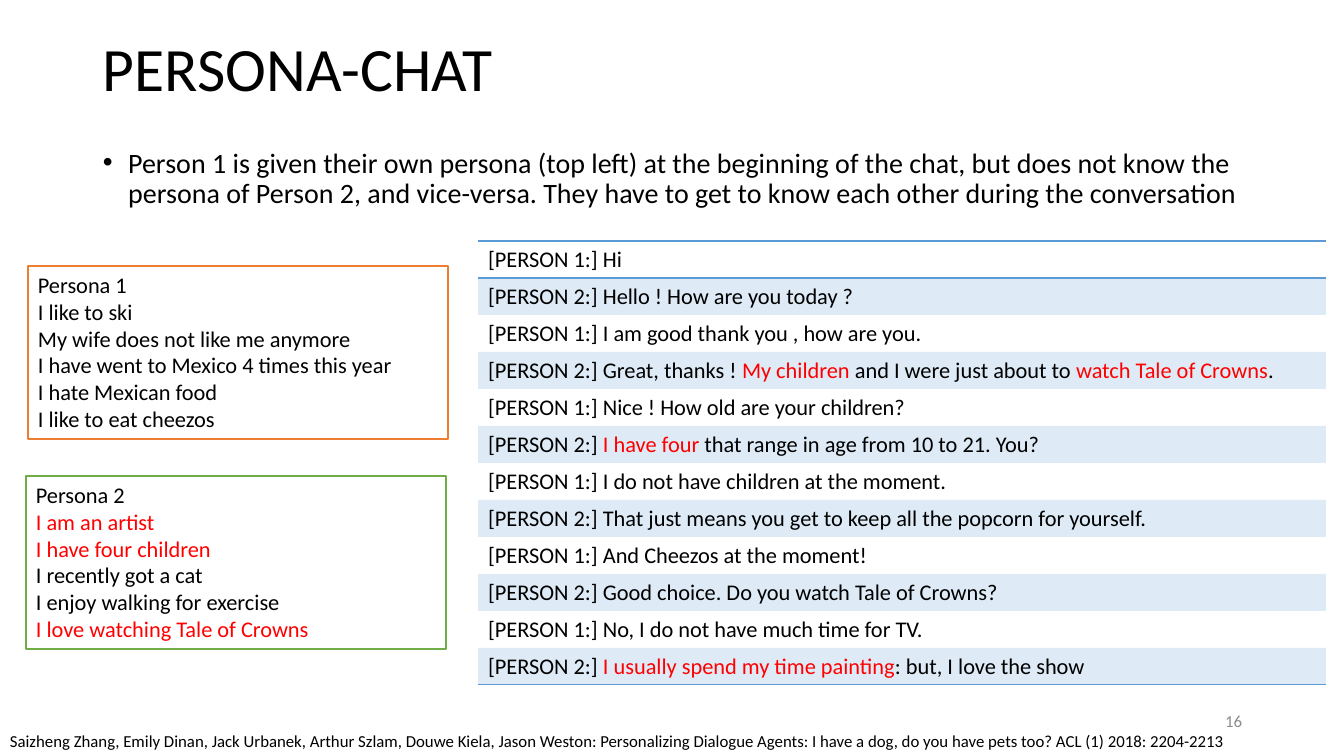
from dataclasses import dataclass

from lxml import etree
from pptx import Presentation
from pptx.dml.color import RGBColor
from pptx.enum.shapes import MSO_SHAPE
from pptx.enum.text import MSO_ANCHOR as ANCHOR, PP_ALIGN as ALIGN
from pptx.oxml.ns import qn
from pptx.util import Pt

PX = 9071.43  # EMU per px


@dataclass
class Theme:
    font: str = "Calibri"
    text: str = "000000"
    paper: str = "FFFFFF"
    mark: str = "FF0000"
    muted: str = "8C8C8C"
    orange: str = "ED7D31"
    green: str = "70AD47"
    blue: str = "5B9BD5"
    title: int = 44
    body: int = 20
    talk: int = 16
    small: int = 12


T = Theme()


def px(*lengths):
    return [round(n * PX) for n in lengths]


def write(tf, lines, size, color=T.text, align=ALIGN.LEFT, anchor=ANCHOR.TOP,
          spacing=None, bullet=False):
    """Fill a text frame; words between asterisks take the mark colour."""
    tf.word_wrap = True
    tf.vertical_anchor = anchor
    for i, line in enumerate(lines):
        p = tf.add_paragraph() if i else tf.paragraphs[0]
        p.alignment = align
        if spacing:
            p.line_spacing = spacing
        if bullet:
            pPr = p._p.get_or_add_pPr()
            pPr.set("marL", "228600")
            pPr.set("indent", "-228600")
            etree.SubElement(pPr, qn("a:buFont"), typeface="Arial")
            etree.SubElement(pPr, qn("a:buChar"), char="•")
        for j, part in enumerate(line.split("*")):
            if part:
                r = p.add_run()
                r.text = part
                r.font.name = T.font
                r.font.size = Pt(size)
                r.font.color.rgb = RGBColor.from_string(T.mark if j % 2 else color)


prs = Presentation()
prs.slide_width, prs.slide_height = px(1344, 756)
s = prs.slides.add_slide(prs.slide_layouts[6])

# Title, bullet and page number
texts = [
    ((93, 0, 1159, 144), "PERSONA-CHAT",
     dict(size=T.title, anchor=ANCHOR.MIDDLE, spacing=0.9)),
    ((93, 144, 1159, 444),
     "Person 1 is given their own persona (top left) at the beginning of the chat, "
     "but does not know the persona of Person 2, and vice-versa. "
     "They have to get to know each other during the conversation",
     dict(size=T.body, spacing=0.9, bullet=True)),
    ((950, 701, 302, 40), "16",
     dict(size=T.small, color=T.muted, align=ALIGN.RIGHT, anchor=ANCHOR.MIDDLE)),
    ((0, 726, 1344, 30),
     "Saizheng Zhang, Emily Dinan, Jack Urbanek, Arthur Szlam, Douwe Kiela, "
     "Jason Weston: Personalizing Dialogue Agents: I have a dog, do you have pets too? "
     "ACL (1) 2018: 2204-2213",
     dict(size=T.small)),
]
for box, text, look in texts:
    write(s.shapes.add_textbox(*px(*box)).text_frame, [text], **look)

# Persona cards
personas = [
    (28, 266, T.orange, [
        "Persona 1", "I like to ski", "My wife does not like me anymore",
        "I have went to Mexico 4 times this year", "I hate Mexican food",
        "I like to eat cheezos"]),
    (26, 476, T.green, [
        "Persona 2", "*I am an artist*", "*I have four children*",
        "I recently got a cat", "I enjoy walking for exercise",
        "*I love watching Tale of Crowns*"]),
]
for left, top, color, lines in personas:
    sp = s.shapes.add_shape(MSO_SHAPE.RECTANGLE, *px(left, top, 420, 173))
    sp.shadow.inherit = False
    sp.fill.solid()
    sp.fill.fore_color.rgb = RGBColor.from_string(T.paper)
    sp.line.color.rgb = RGBColor.from_string(color)
    sp.line.width = Pt(1)
    write(sp.text_frame, lines, T.talk)

# Conversation: the two persons take turns
turns = [
    "Hi",
    "Hello ! How are you today ?",
    "I am good thank you , how are you.",
    "Great, thanks ! *My children *and I were just about to *watch Tale of Crowns*.",
    "Nice ! How old are your children?",
    "*I have four* that range in age from 10 to 21. You?",
    "I do not have children at the moment.",
    "That just means you get to keep all the popcorn for yourself.",
    "And Cheezos at the moment!",
    "Good choice. Do you watch Tale of Crowns?",
    "No, I do not have much time for TV.",
    "*I usually spend my time painting*: but, I love the show",
]
ROW = 37
last = len(turns) - 1
frame = s.shapes.add_table(len(turns), 1, *px(478, 241, 848, ROW * len(turns)))
table = frame.table
table.first_row = table.horz_banding = False
NO_STYLE = "{2D5ABB26-0587-4C30-8999-92F81FD0307C}"
table._tbl.tblPr.find(qn("a:tableStyleId")).text = NO_STYLE

for i, turn in enumerate(turns):
    table.rows[i].height = px(ROW)[0]
    cell = table.cell(i, 0)
    write(cell.text_frame, [f"[PERSON {i % 2 + 1}:] {turn}"], T.talk)

    # Rules above and below the first row and below the last
    edges = {0: ("a:lnT", "a:lnB"), last: ("a:lnB",)}.get(i, ())
    for edge in edges:
        ln = etree.SubElement(cell._tc.get_or_add_tcPr(), qn(edge), w=str(Pt(1)))
        fill = etree.SubElement(ln, qn("a:solidFill"))
        etree.SubElement(fill, qn("a:srgbClr"), val=T.blue)

    # Every reply by Person 2 has a pale band
    if i % 2:
        cell.fill.solid()
        cell.fill.fore_color.rgb = RGBColor.from_string(T.blue)
        clr = cell._tc.tcPr.find(qn("a:solidFill")).find(qn("a:srgbClr"))
        etree.SubElement(clr, qn("a:alpha"), val="20000")
    else:
        cell.fill.background()

prs.save("out.pptx")
